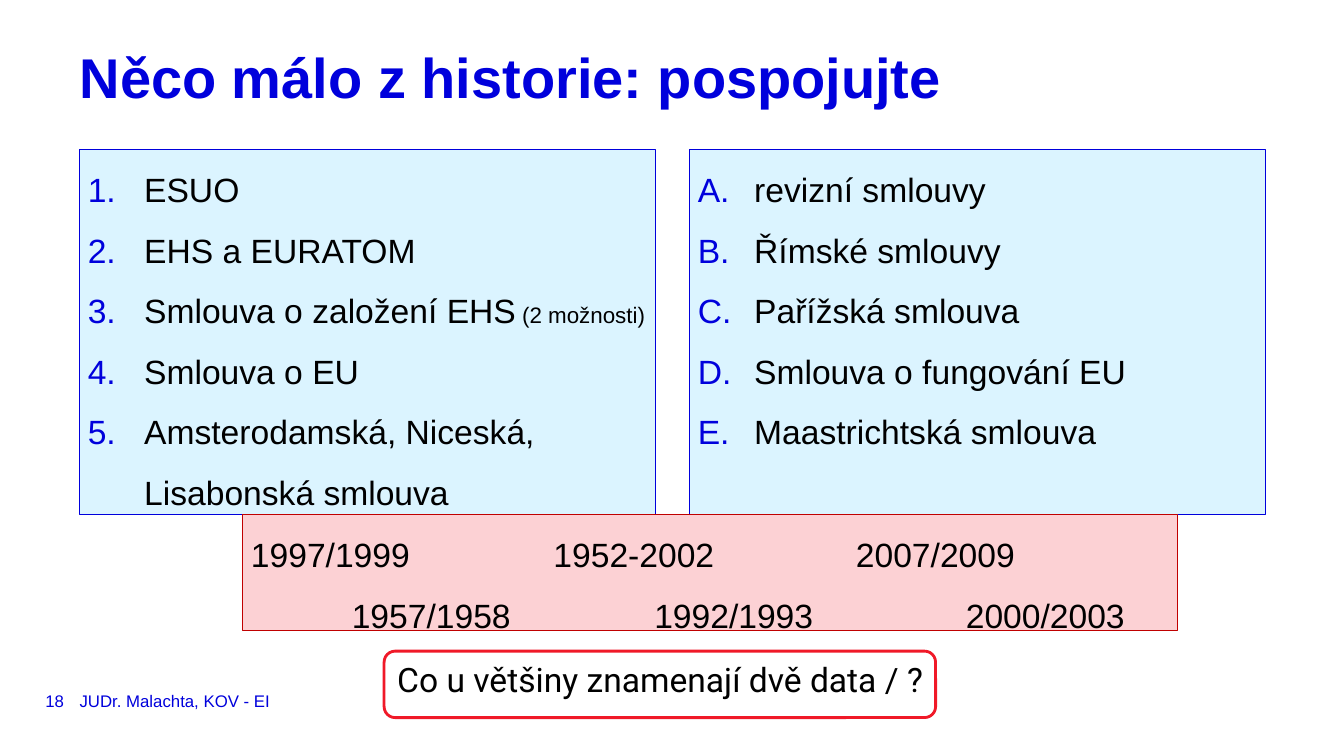
from dataclasses import dataclass

from lxml import etree
from pptx import Presentation
from pptx.dml.color import RGBColor
from pptx.enum import shapes, text
from pptx.oxml import ns
from pptx.util import Inches, Pt

COLORS = {
    "blue": "0000DC", "sky": "DBF4FF", "pink": "FCD1D4", "dark_red": "C00000",
    "red": "F01928", "white": "FFFFFF", "black": "000000",
}
RECT = shapes.MSO_SHAPE.RECTANGLE
ROUNDED = shapes.MSO_SHAPE.ROUNDED_RECTANGLE


@dataclass
class Panel:
    left: float
    top: float
    width: float
    height: float
    fill: str
    line: str
    line_width: float = 0.75
    kind: shapes.MSO_SHAPE = RECT


@dataclass
class NumberedList:
    left: float
    scheme: str
    items: list[str]


LISTS = [
    NumberedList(0.79, "arabicPeriod", [
        "ESUO", "EHS a EURATOM", "Smlouva o založení EHS| (2 možnosti)",
        "Smlouva o EU", "Amsterodamská, Niceská, Lisabonská smlouva"]),
    NumberedList(6.84, "alphaUcPeriod", [
        "revizní smlouvy", "Římské smlouvy", "Pařížská smlouva",
        "Smlouva o fungování EU", "Maastrichtská smlouva"]),
]
DATE_ROWS = [
    ("1997/1999\t1952-2002\t2007/2009", (3, 6)),
    ("\t1957/1958\t1992/1993\t2000/2003", (1, 4, 7.09)),
]


def rgb(name: str) -> RGBColor:
    return RGBColor.from_string(COLORS[name])


def add_panel(slide, panel: Panel):
    sp = slide.shapes.add_shape(panel.kind, *map(
        Inches, (panel.left, panel.top, panel.width, panel.height)))
    sp.shadow.inherit = False
    sp.fill.solid()
    sp.fill.fore_color.rgb = rgb(panel.fill)
    sp.line.color.rgb = rgb(panel.line)
    sp.line.width = Pt(panel.line_width)
    return sp


def add_label(slide, left: float, top: float, width: float, height: float):
    return slide.shapes.add_textbox(*map(Inches, (left, top, width, height)))


def set_frame(sp, *, inset=(0, 0, 0, 0), wrap=True, anchor=text.MSO_ANCHOR.TOP):
    tf = sp.text_frame
    tf.word_wrap = wrap
    tf.vertical_anchor = anchor
    tf.margin_left, tf.margin_top, tf.margin_right, tf.margin_bottom = map(Inches, inset)
    return tf


def write(tf, content: str, *, size=24, font="Arial", color="black", bold=False,
          spacing=None, scheme=None, tabs=(), note_size=16) -> None:
    """Add one paragraph; text after "|" is set in note_size."""
    p = tf.paragraphs[0] if not tf.paragraphs[0].runs else tf.add_paragraph()
    p.alignment = text.PP_ALIGN.LEFT
    if spacing:
        p.line_spacing = spacing
    if scheme:
        add_numbering(p, scheme)
    if tabs:
        add_tabs(p, tabs)
    for part, part_size in zip(content.split("|"), (size, note_size)):
        r = p.add_run()
        r.text = part
        r.font.size = Pt(part_size)
        r.font.name = font
        r.font.bold = bold
        r.font.color.rgb = rgb(color)


def add_numbering(p, scheme: str) -> None:
    props = p._p.get_or_add_pPr()
    props.set("marL", str(Inches(0.64)))
    props.set("indent", str(Inches(-0.56)))
    bullet_color = etree.SubElement(props, ns.qn("a:buClr"))
    etree.SubElement(bullet_color, ns.qn("a:srgbClr"), val=COLORS["blue"])
    etree.SubElement(props, ns.qn("a:buAutoNum"), type=scheme)


def add_tabs(p, stops: tuple[float, ...]) -> None:
    tab_list = etree.SubElement(p._p.get_or_add_pPr(), ns.qn("a:tabLst"))
    for stop in stops:
        etree.SubElement(tab_list, ns.qn("a:tab"), pos=str(Inches(stop)), algn="l")


def main() -> None:
    prs = Presentation()
    prs.slide_width, prs.slide_height = Inches(13.33), Inches(7.5)
    slide = prs.slides.add_slide(prs.slide_layouts[6])

    middle = text.MSO_ANCHOR.MIDDLE
    footer = set_frame(add_label(slide, 0.79, 6.81, 8.66, 0.28), anchor=middle)
    write(footer, "JUDr. Malachta, KOV - EI", size=12, color="blue")
    number = set_frame(add_label(slide, 0.45, 6.81, 0.28, 0.28), wrap=False, anchor=middle)
    write(number, "18", size=12, color="blue")
    title = set_frame(add_label(slide, 0.79, 0.53, 11.76, 0.49))
    write(title, "Něco málo z historie: pospojujte", size=40, color="blue",
          bold=True, spacing=Pt(40))

    for entry in LISTS:
        tf = set_frame(add_panel(slide, Panel(entry.left, 1.48, 5.71, 3.62, "sky", "blue")))
        for item in entry.items:
            write(tf, item, spacing=1.5, scheme=entry.scheme)

    dates = set_frame(add_panel(slide, Panel(2.41, 5.1, 9.27, 1.16, "pink", "dark_red")),
                      inset=(0.08, 0, 0, 0))
    for row, stops in DATE_ROWS:
        write(dates, row, spacing=1.5, tabs=stops)

    question = add_panel(slide, Panel(3.81, 6.46, 5.47, 0.66, "white", "red", 2, ROUNDED))
    write(set_frame(question, inset=(0.1, 0.05, 0.1, 0.05), wrap=False),
          "Co u většiny znamenají dvě data / ?", font="Roboto")

    prs.save("out.pptx")


if __name__ == "__main__":
    main()
